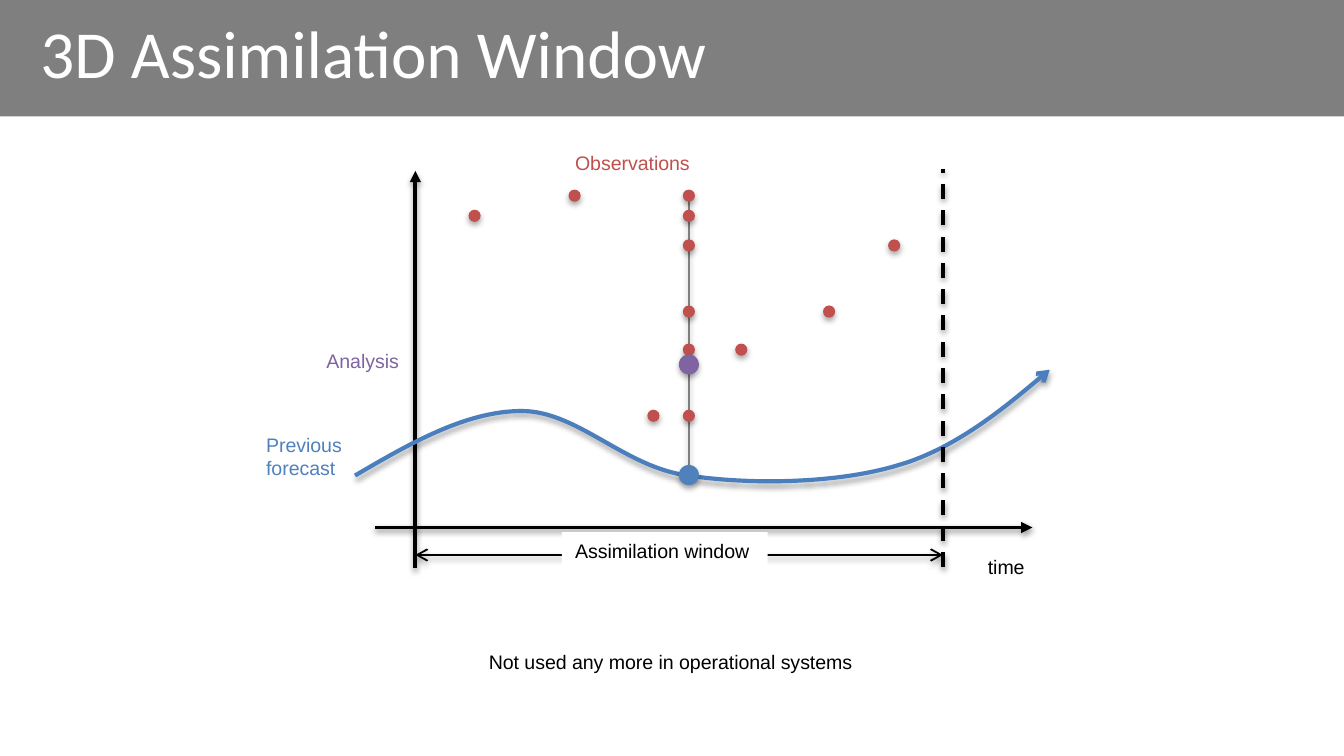
"""Build the slide that explains the 3D assimilation window."""
from lxml.etree import SubElement
from pptx import Presentation
from pptx.dml.color import RGBColor
from pptx.enum.dml import MSO_LINE
from pptx.enum.shapes import MSO_CONNECTOR, MSO_SHAPE
from pptx.enum.text import MSO_ANCHOR, MSO_AUTO_SIZE, PP_ALIGN
from pptx.oxml.ns import qn
from pptx.util import Cm, Pt

BLACK = RGBColor(0x00, 0x00, 0x00)
WHITE = RGBColor(0xFF, 0xFF, 0xFF)
GRAY = RGBColor(0x80, 0x80, 0x80)
RED = RGBColor(0xC0, 0x50, 0x4D)
BLUE = RGBColor(0x4F, 0x81, 0xBD)
CURVE_BLUE = RGBColor(0x4B, 0x7E, 0xBC)
PURPLE = RGBColor(0x80, 0x64, 0xA2)

TITLE = "3D Assimilation Window"
START_X, MIDDLE_X, END_X = 7.85, 13.02, 17.82
FORECAST_Y, ANALYSIS_Y = 8.98, 6.89
DOT, STATE_DOT = 0.23, 0.38
OBSERVATIONS = [(8.97, 4.08), (10.86, 3.7), (12.35, 7.86),
                (14.01, 6.61), (15.67, 5.89), (16.9, 4.64)]
FORECAST = [(6.71, 8.99),
            (7.75, 8.38), (8.81, 7.77), (9.86, 7.77),
            (10.92, 7.77), (11.81, 8.84), (13.01, 8.99),
            (14.2, 9.17), (15.85, 9.14), (16.99, 8.79),
            (18.14, 8.46), (19.84, 6.99), (19.84, 6.99)]
LABELS = [
    ("time", (18.42, 10.36, 1.22, 0.71), BLACK, None),
    ("Previous\nforecast", (4.78, 8.05, 1.98, 1.14), BLUE, None),
    ("Assimilation window", (10.62, 10.06, 3.89, 0.71), BLACK, WHITE),
    ("Observations", (10.62, 2.72, 2.72, 0.71), RED, None),
    ("Analysis", (5.92, 6.48, 1.91, 0.71), PURPLE, None),
    ("Not used any more in operational systems", (8.99, 12.17, 7.52, 0.71), BLACK, None),
]


def add_shadow(sp, alpha, dist):
    effects = SubElement(sp._element.spPr, qn("a:effectLst"))
    shadow = SubElement(effects, qn("a:outerShdw"), blurRad=str(Pt(3.1)),
                        dist=str(Pt(dist)), dir="5400000", rotWithShape="0")
    color = SubElement(shadow, qn("a:srgbClr"), val=str(BLACK))
    SubElement(color, qn("a:alpha"), val=str(alpha * 1000))


def format_line(line, color, width, dash=None, head=None, tail=None):
    line.color.rgb = color
    line.width = Pt(width)
    if dash:
        line.dash_style = dash
    for tag, kind in (("a:headEnd", head), ("a:tailEnd", tail)):
        if kind:
            SubElement(line._get_or_add_ln(), qn(tag), type=kind)


def add_line(s, start, end, width, color=BLACK, **ends):
    sp = s.shapes.add_connector(MSO_CONNECTOR.STRAIGHT, *map(Cm, start + end))
    format_line(sp.line, color, width, **ends)
    add_shadow(sp, 38, 1.6)


def add_curve(s, points):
    pts = [(Cm(x), Cm(y)) for x, y in points]
    builder = s.shapes.build_freeform(*pts[0])
    builder.add_line_segments(pts[1:], close=False)
    sp = builder.convert_to_shape()
    path = next(sp._element.iter(qn("a:path")))
    segments = path.findall(qn("a:lnTo"))
    for i in range(0, len(segments), 3):
        bezier = SubElement(path, qn("a:cubicBezTo"))
        for segment in segments[i:i + 3]:
            bezier.append(segment[0])
            path.remove(segment)
    sp.fill.background()
    format_line(sp.line, CURVE_BLUE, 2.25, tail="arrow")
    add_shadow(sp, 35, 1.8)


def add_dot(s, x, y, size, color):
    sp = s.shapes.add_shape(MSO_SHAPE.OVAL, Cm(x - size / 2), Cm(y - size / 2),
                            Cm(size), Cm(size))
    sp.fill.solid()
    sp.fill.fore_color.rgb = color
    sp.line.fill.background()
    add_shadow(sp, 35, 1.8)


def write(tf, text, font="Arial", size=10.5, color=BLACK):
    for i, line in enumerate(text.split("\n")):
        p = tf.add_paragraph() if i else tf.paragraphs[0]
        p.alignment = PP_ALIGN.LEFT
        r = p.add_run()
        r.text = line
        r.font.name = font
        r.font.size = Pt(size)
        r.font.color.rgb = color


def add_label(s, text, box, color, fill):
    sp = s.shapes.add_textbox(*map(Cm, box))
    if fill is not None:
        sp.fill.solid()
        sp.fill.fore_color.rgb = fill
    tf = sp.text_frame
    tf.word_wrap = False
    tf.auto_size = MSO_AUTO_SIZE.SHAPE_TO_FIT_TEXT
    write(tf, text, color=color)


def add_title(s, prs):
    band = s.shapes.add_shape(MSO_SHAPE.RECTANGLE, 0, 0, prs.slide_width, Cm(2.2))
    band.shadow.inherit = False
    band.fill.solid()
    band.fill.fore_color.rgb = BLACK
    color = next(band._element.spPr.iter(qn("a:srgbClr")))
    SubElement(color, qn("a:alpha"), val="50000")
    band.line.fill.background()
    title = s.shapes.title
    band._element.addnext(title._element)
    title.left, title.top, title.width, title.height = map(Cm, (0.51, 0, 21.18, 1.96))
    tf = title.text_frame
    tf.word_wrap = True
    tf.auto_size = MSO_AUTO_SIZE.NONE
    tf.vertical_anchor = MSO_ANCHOR.MIDDLE
    write(tf, TITLE, font="Calibri", size=36, color=WHITE)


def main():
    prs = Presentation()
    prs.slide_width, prs.slide_height = Cm(25.4), Cm(14.29)
    s = prs.slides.add_slide(prs.slide_layouts[5])
    add_title(s, prs)

    add_line(s, (MIDDLE_X, 3.78), (MIDDLE_X, 8.79), 0.75, color=GRAY)
    add_line(s, (7.09, 9.97), (19.51, 9.97), 2, tail="triangle")
    add_line(s, (START_X, 10.74), (START_X, 3.23), 2, tail="triangle")
    add_curve(s, FORECAST)
    add_line(s, (END_X, 10.72), (END_X, 3.2), 2, dash=MSO_LINE.DASH)
    add_line(s, (START_X, 10.49), (END_X, 10.49), 1, head="arrow", tail="arrow")

    for x, y in OBSERVATIONS:
        add_dot(s, x, y, DOT, RED)
        add_dot(s, MIDDLE_X, y, DOT, RED)
    add_dot(s, MIDDLE_X, FORECAST_Y, STATE_DOT, BLUE)
    add_dot(s, MIDDLE_X, ANALYSIS_Y, STATE_DOT, PURPLE)

    for label in LABELS:
        add_label(s, *label)
    prs.save("out.pptx")


if __name__ == "__main__":
    main()
